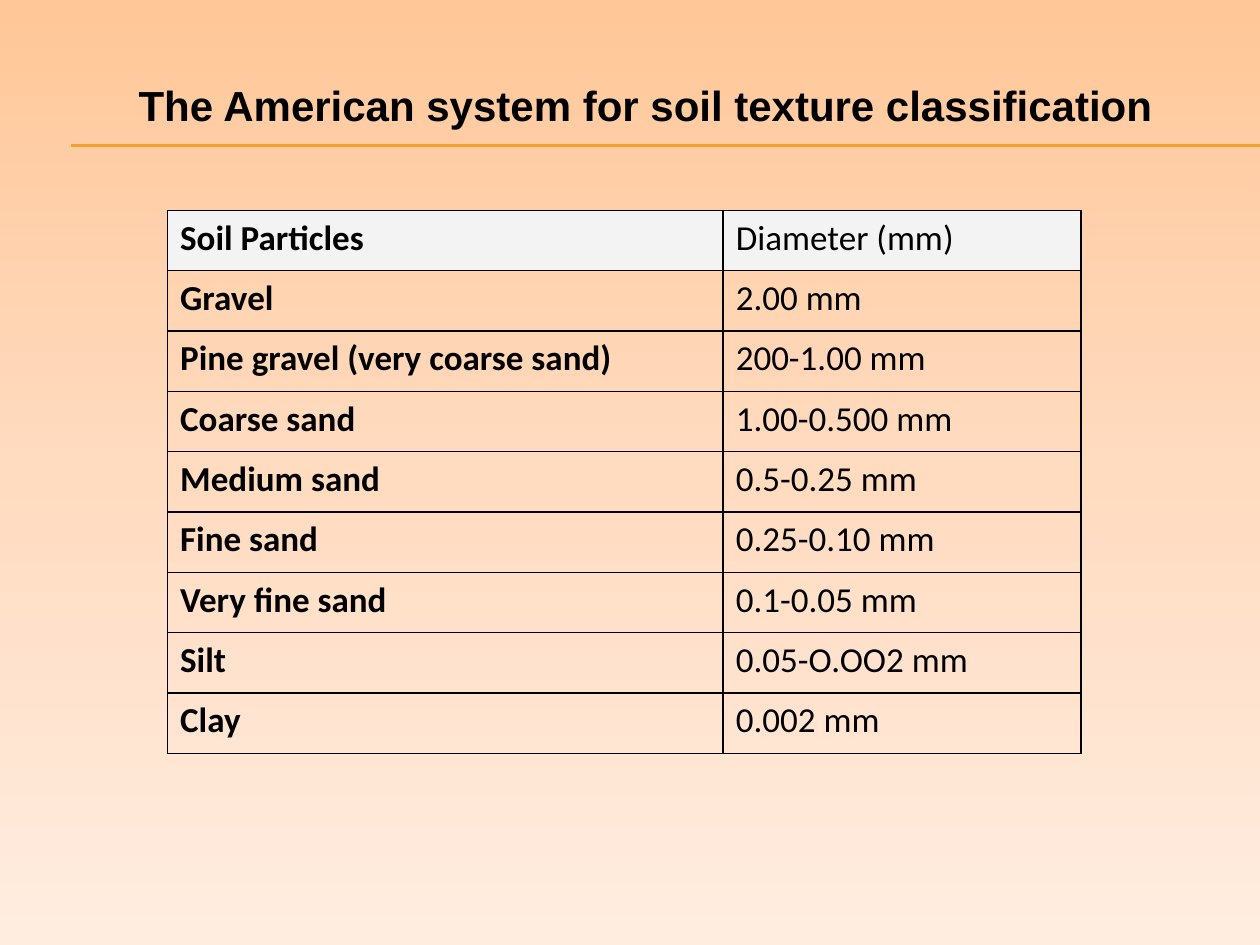
import copy

import lxml.etree
import pptx
import pptx.dml.color
import pptx.enum.shapes
import pptx.enum.text
import pptx.oxml
import pptx.oxml.ns
import pptx.util
from pptx.util import Inches

BLACK = "000000"


def rgb(value):
    return pptx.dml.color.RGBColor.from_string(value)


def style_run(r, font, size, bold):
    r.font.name = font
    r.font.size = pptx.util.Pt(size)
    r.font.bold = bold
    r.font.color.rgb = rgb(BLACK)


prs = pptx.Presentation()
prs.slide_width = Inches(10)
prs.slide_height = Inches(7.5)
s = prs.slides.add_slide(prs.slide_layouts[5])

# Background: vertical gradient with a third stop in the middle
fill = s.background.fill
fill.gradient()
fill.gradient_angle = 270
stop_list = s._element.find(".//" + pptx.oxml.ns.qn("a:gsLst"))
stop_list.insert(1, copy.deepcopy(stop_list[0]))
stops = [(0, "FFC798"), (0.5, "FFDBC0"), (1, "FFEDE0")]
for stop, (position, color) in zip(fill.gradient_stops, stops):
    stop.position = position
    stop.color.rgb = rgb(color)

# Title
title = s.shapes.title
title.left, title.top = Inches(1), Inches(0.58)
title.width, title.height = Inches(8.32), Inches(0.51)
tf = title.text_frame
tf.text = "The American system for soil texture classification"
tf.word_wrap = False
tf.auto_size = pptx.enum.text.MSO_AUTO_SIZE.SHAPE_TO_FIT_TEXT
tf.vertical_anchor = pptx.enum.text.MSO_ANCHOR.TOP
p = tf.paragraphs[0]
p.alignment = pptx.enum.text.PP_ALIGN.LEFT
style_run(p.runs[0], "Arial", 24, True)

# Double rule under the title
for y in (1.15, 1.16):
    rule = s.shapes.add_connector(
        pptx.enum.shapes.MSO_CONNECTOR.STRAIGHT,
        Inches(0.56), Inches(y), Inches(10), Inches(y))
    rule.line.color.rgb = rgb("F0A22E")
    rule.line.width = pptx.util.Pt(0.75)
    lxml.etree.SubElement(rule._element.spPr, pptx.oxml.ns.qn("a:effectLst"))

# Table of particle sizes
rows = [
    ("Soil Particles", "Diameter (mm)"),
    ("Gravel", "2.00 mm"),
    ("Pine gravel (very coarse sand)", "200-1.00 mm"),
    ("Coarse sand", "1.00-0.500 mm"),
    ("Medium sand", "0.5-0.25 mm"),
    ("Fine sand", "0.25-0.10 mm"),
    ("Very fine sand", "0.1-0.05 mm"),
    ("Silt", "0.05-O.OO2 mm"),
    ("Clay", "0.002 mm"),
]
table = s.shapes.add_table(len(rows), 2, Inches(1.33), Inches(1.67),
                           Inches(7.25), Inches(4.31)).table
table.horz_banding = False
table.columns[0].width = Inches(4.41)
table.columns[1].width = Inches(2.84)

border_xml = ('<a:{} xmlns:a="http://schemas.openxmlformats.org/drawingml/2006/main" w="12700">'
              '<a:solidFill><a:srgbClr val="{}"/></a:solidFill></a:{}>')
for i, row in enumerate(rows):
    table.rows[i].height = Inches(4.31 / len(rows))
    for j, text in enumerate(row):
        cell = table.cell(i, j)
        cell.text = text
        p = cell.text_frame.paragraphs[0]
        style_run(p.runs[0], "Calibri", 20, j == 0)
        pPr = p._p.get_or_add_pPr()
        pPr.set("marL", str(Inches(0.38)))
        pPr.set("indent", str(Inches(-0.38)))
        tcPr = cell._tc.get_or_add_tcPr()
        for side in ("lnL", "lnR", "lnT", "lnB"):
            tcPr.append(pptx.oxml.parse_xml(border_xml.format(side, BLACK, side)))
        if i == 0:
            cell.fill.solid()
            cell.fill.fore_color.rgb = rgb("F3F3F3")
        else:
            cell.fill.background()

prs.save("out.pptx")
